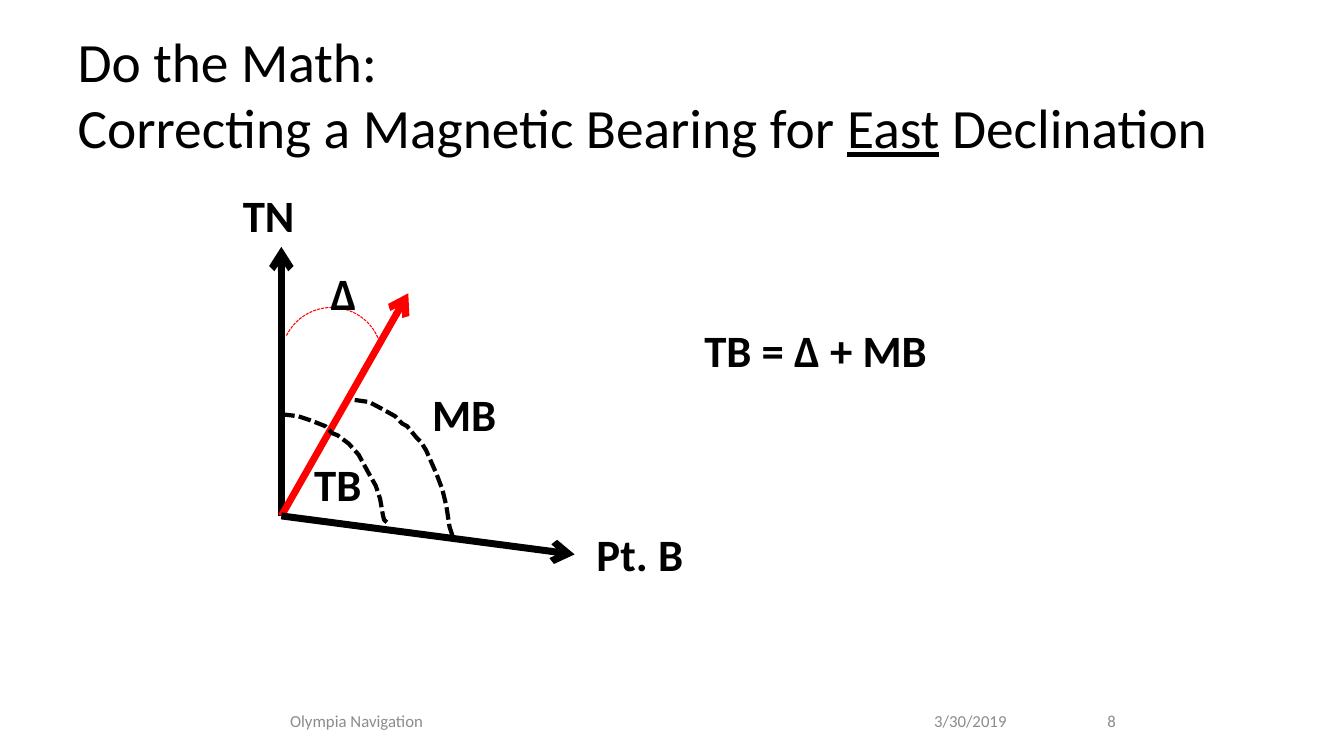
import pptx
import pptx.util
import pptx.dml.color
import pptx.enum.dml
import pptx.enum.shapes
import pptx.enum.text
import pptx.oxml.ns
from lxml import etree

Cm = pptx.util.Cm
Pt = pptx.util.Pt
ALIGN = pptx.enum.text.PP_ALIGN
ANCHOR = pptx.enum.text.MSO_ANCHOR
COLORS = {"ink": "000000", "magnetic": "FF0000", "footer": "8C8C8C"}


def style_line(line, color, width, dash=None):
    line.color.rgb = pptx.dml.color.RGBColor.from_string(COLORS[color])
    line.width = Pt(width)
    if dash:
        line.dash_style = dash


def add_label(text, left, top, width, height, size, color, bold, align, anchor, wrap):
    label = slide.shapes.add_textbox(Cm(left), Cm(top), Cm(width), Cm(height))
    frame = label.text_frame
    frame.word_wrap = wrap
    frame.vertical_anchor = anchor
    paragraph = frame.paragraphs[0]
    paragraph.text = text
    paragraph.alignment = align
    paragraph.font.name = "Calibri"
    paragraph.font.size = Pt(size)
    paragraph.font.bold = bold
    paragraph.font.color.rgb = pptx.dml.color.RGBColor.from_string(COLORS[color])


deck = pptx.Presentation()
deck.slide_width = Cm(33.87)
deck.slide_height = Cm(19.05)
slide = deck.slides.add_slide(deck.slide_layouts[5])

title = slide.shapes.title
title.left, title.top, title.width, title.height = Cm(1.7), Cm(0.76), Cm(30.48), Cm(3.18)
title.text_frame.auto_size = pptx.enum.text.MSO_AUTO_SIZE.NONE
title.text_frame.vertical_anchor = ANCHOR.MIDDLE
heading = title.text_frame.paragraphs[0]
heading.text = "Do the Math:\vCorrecting a Magnetic Bearing for "
direction = heading.add_run()
direction.text = "East"
direction.font.underline = True
heading.add_run().text = " Declination"
heading.alignment = ALIGN.LEFT
heading.font.name = "Calibri"
heading.font.size = Pt(39.6)
heading.font.color.rgb = pptx.dml.color.RGBColor.from_string(COLORS["ink"])

for text, left, width, align in [
    ("3/30/2019", 23.29, 2.54, ALIGN.LEFT),
    ("Olympia Navigation", 7.06, 7.62, ALIGN.LEFT),
    ("8", 25.83, 2.54, ALIGN.RIGHT),
]:
    add_label(text, left, 17.78, width, 0.76, 12, "footer", False, align, ANCHOR.MIDDLE, True)

origin = (7.09, 13)
for tip, color in [
    ((7.09, 6.22), "ink"),
    ((10.29, 7.39), "magnetic"),
    ((14.48, 13.97), "ink"),
]:
    ray = slide.shapes.add_connector(
        pptx.enum.shapes.MSO_CONNECTOR.STRAIGHT, *map(Cm, origin + tip))
    style_line(ray.line, color, 5)
    etree.SubElement(ray.line._get_or_add_ln(), pptx.oxml.ns.qn("a:tailEnd"), type="arrow")
    etree.SubElement(ray._element.spPr, pptx.oxml.ns.qn("a:effectLst"))

DASH = pptx.enum.dml.MSO_LINE.SQUARE_DOT
declination = slide.shapes.add_shape(
    pptx.enum.shapes.MSO_SHAPE.ARC, Cm(7.09), Cm(7.75), Cm(2.54), Cm(2.54))
declination.rotation = 5.9
declination.adjustments[0] = 120.253
declination.adjustments[1] = 201.493
declination.fill.background()
declination.shadow.inherit = False
style_line(declination.line, "magnetic", 0.75, DASH)

true_bearing = [
    (7.11, 10.44), (7.52, 10.49), (7.82, 10.59), (8.2, 10.74), (8.38, 10.92),
    (8.51, 10.97), (8.79, 11.18), (9.04, 11.46), (9.3, 11.94), (9.47, 12.24),
    (9.58, 12.57), (9.65, 12.98), (9.68, 13.1), (9.75, 13.16),
]
magnetic_bearing = [
    (8.94, 10.08), (9.3, 10.13), (9.6, 10.29), (9.96, 10.49), (10.13, 10.67),
    (10.26, 10.74), (10.49, 11.02), (10.62, 11.15), (10.74, 11.35), (11, 11.94),
    (11.15, 12.34), (11.25, 12.75), (11.33, 13.28), (11.4, 13.49),
]
for bearing in (true_bearing, magnetic_bearing):
    points = [(Cm(x), Cm(y)) for x, y in bearing]
    outline = slide.shapes.build_freeform(*points[0])
    outline.add_line_segments(points[1:], close=False)
    sweep = outline.convert_to_shape()
    sweep.fill.background()
    sweep.shadow.inherit = False
    style_line(sweep.line, "ink", 3, DASH)

for text, left, top, width, wrap in [
    ("TB", 7.67, 11.38, 1.93, True),
    ("TN", 5.87, 4.6, 1.83, False),
    ("MB", 10.64, 9.63, 2.16, False),
    ("Δ", 8.08, 6.58, 1.22, False),
    ("Pt. B", 14.78, 13.16, 2.72, False),
    ("TB = Δ + MB", 17.5, 8, 6.71, True),
]:
    add_label(text, left, top, width, 1.63, 32, "ink", True, ALIGN.LEFT, ANCHOR.TOP, wrap)

deck.save("out.pptx")
